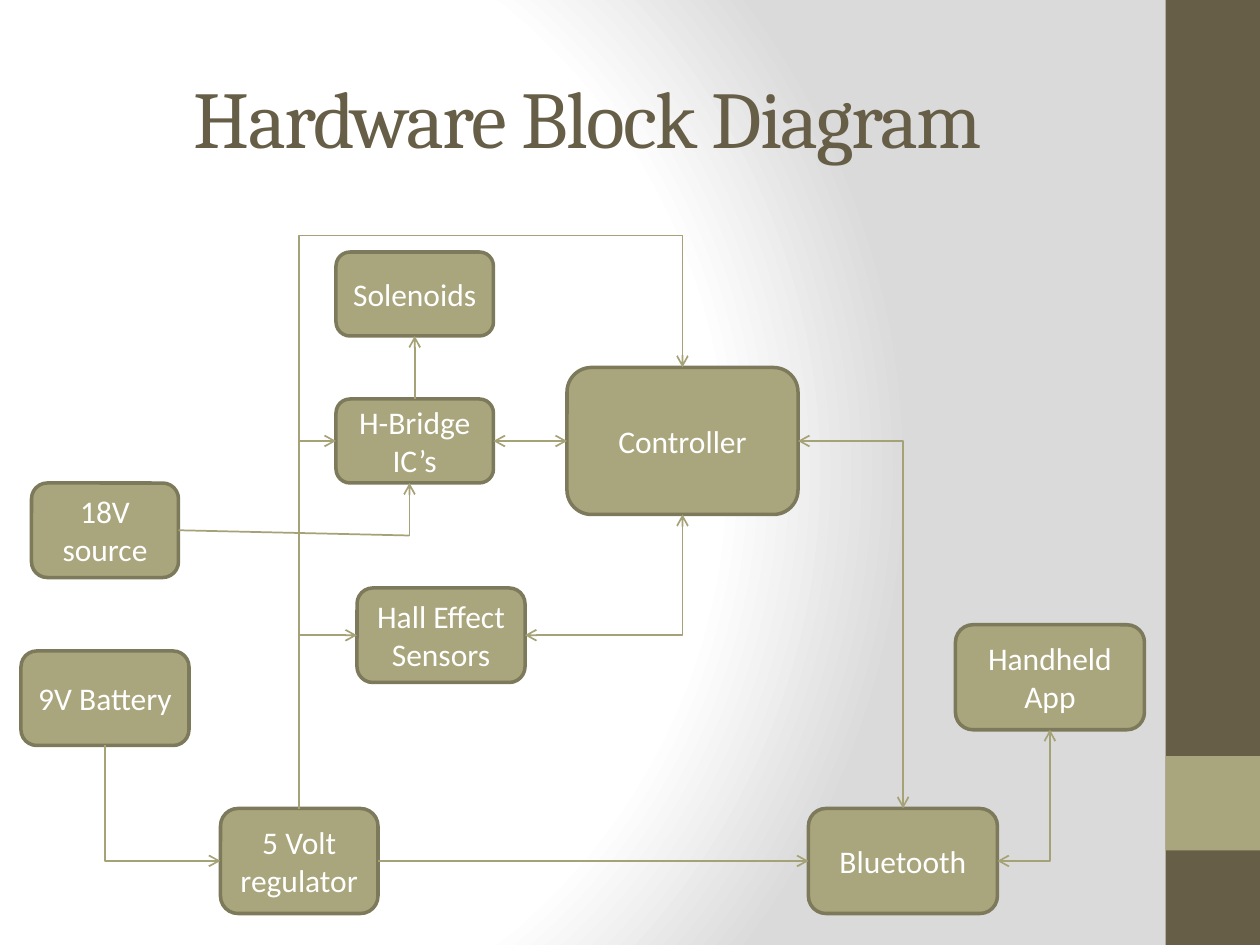
from dataclasses import dataclass

from lxml.etree import SubElement
from pptx import Presentation
from pptx.dml.color import RGBColor
from pptx.enum.shapes import MSO_CONNECTOR as Connector, MSO_SHAPE as Shape
from pptx.enum.text import MSO_ANCHOR as Anchor, MSO_AUTO_SIZE as AutoSize, PP_ALIGN as Align
from pptx.oxml import parse_xml
from pptx.oxml.ns import nsdecls, qn
from pptx.util import Pt

PX = 7620
TOP, LEFT, BOTTOM, RIGHT = range(4)


@dataclass(frozen=True)
class Theme:
    """Hold the colours, fonts and type sizes."""
    dark: str = "675E47"
    olive: str = "A9A57C"
    border: str = "7D7A5C"
    wire: str = "A6A278"
    white: str = "FFFFFF"
    shade: str = "DADADA"
    title_font: str = "Cambria"
    body_font: str = "Calibri"
    title_size: int = 46
    body_size: int = 18


THEME = Theme()

BLOCKS = {
    "9V Battery": (20, 380, 160, 90),
    "5 Volt regulator": (210, 530, 150, 100),
    "Controller": (540, 110, 220, 140),
    "Bluetooth": (770, 530, 180, 100),
    "Handheld App": (910, 355, 180, 100),
    "Hall Effect Sensors": (340, 320, 160, 90),
    "H-Bridge IC’s": (320, 140, 150, 80),
    "Solenoids": (320, 0, 150, 80),
    "18V source": (30, 220, 140, 90),
}

STRAIGHT_LINKS = [
    ("5 Volt regulator", RIGHT, "Bluetooth", LEFT, "tail"),
    ("H-Bridge IC’s", TOP, "Solenoids", BOTTOM, "tail"),
    ("Controller", LEFT, "H-Bridge IC’s", RIGHT, "head tail"),
]

CORNER_LINKS = [
    ("5 Volt regulator", LEFT, "9V Battery", BOTTOM, "head"),
    ("Controller", RIGHT, "Bluetooth", TOP, "head tail"),
    ("Bluetooth", RIGHT, "Handheld App", BOTTOM, "head tail"),
    ("Hall Effect Sensors", LEFT, "5 Volt regulator", TOP, "head"),
    ("H-Bridge IC’s", LEFT, "5 Volt regulator", TOP, "head"),
    ("Hall Effect Sensors", RIGHT, "Controller", BOTTOM, "head tail"),
]


def px(*lengths):
    """Turn px lengths into EMU."""
    return [int(length * PX) for length in lengths]


def style_runs(text_frame, font_name, size, color):
    """Centre the text and format its runs."""
    text_frame.word_wrap = True
    text_frame.vertical_anchor = Anchor.MIDDLE
    for paragraph in text_frame.paragraphs:
        paragraph.alignment = Align.CENTER
        for run in paragraph.runs:
            run.font.name = font_name
            run.font.size = Pt(size)
            run.font.color.rgb = RGBColor.from_string(color)


def add_box(slide, kind, box, fill, border=None):
    """Add a flat filled shape."""
    shape = slide.shapes.add_shape(kind, *px(*box))
    shape.shadow.inherit = False
    shape.fill.solid()
    shape.fill.fore_color.rgb = RGBColor.from_string(fill)
    if border:
        shape.line.color.rgb = RGBColor.from_string(border)
        shape.line.width = Pt(2)
    else:
        shape.line.fill.background()
    return shape


def set_background(slide):
    """Give the slide its radial gradient."""
    slide.background.fill.gradient()
    gradient = slide.element.find(".//" + qn("a:gradFill"))
    stops = "".join(
        f'<a:gs pos="{position}"><a:srgbClr val="{color}"/></a:gs>'
        for position, color in ((0, THEME.white), (75000, THEME.white), (100000, THEME.shade))
    )
    gradient.getparent().replace(gradient, parse_xml(
        f'<a:gradFill {nsdecls("a")} rotWithShape="1"><a:gsLst>{stops}</a:gsLst>'
        '<a:path path="circle"><a:fillToRect l="20000" t="50000" r="100000" b="50000"/>'
        '</a:path></a:gradFill>'
    ))


def add_side_band(slide, left, top, width, height):
    """Add the dark side band with its light square."""
    add_box(slide, Shape.RECTANGLE, (left, top, width, height), THEME.dark)
    square_top = top + height - 2 * width
    add_box(slide, Shape.RECTANGLE, (left, square_top, width, width), THEME.olive)


def add_title(slide, left, top, width, height):
    """Place and format the title placeholder."""
    title = slide.shapes.title
    title.left, title.top, title.width, title.height = px(left, top, width, height)
    title.text_frame.text = "Hardware Block Diagram"
    title.text_frame.auto_size = AutoSize.NONE
    style_runs(title.text_frame, THEME.title_font, THEME.title_size, THEME.dark)
    for run in title.text_frame.paragraphs[0].runs:
        run.font._element.set("spc", "-100")


def add_wire(slide, kind, start, end, arrows=""):
    """Add a thin connector with open arrowheads."""
    wire = slide.shapes.add_connector(kind, *px(*start, *end))
    wire.line.color.rgb = RGBColor.from_string(THEME.wire)
    wire.line.width = Pt(1)
    properties = wire._element.spPr
    for side in arrows.split():
        SubElement(properties.find(qn("a:ln")), qn(f"a:{side}End"), type="arrow")
    SubElement(properties, qn("a:effectLst"))
    return wire


def link(slide, kind, blocks, source, source_side, target, target_side, arrows):
    """Join two blocks with a connector."""
    wire = add_wire(slide, kind, (0, 0), (0, 0), arrows)
    wire.begin_connect(blocks[source], source_side)
    wire.end_connect(blocks[target], target_side)
    return wire


def set_preset(wire, preset):
    """Change the connector geometry and return its guide list."""
    geometry = wire._element.spPr.find(qn("a:prstGeom"))
    geometry.set("prst", preset)
    return geometry.get_or_add_avLst()


def add_overhead_wire(slide, blocks):
    """Route the regulator over the blocks to the controller."""
    wire = link(slide, Connector.ELBOW, blocks, "5 Volt regulator", TOP, "Controller", TOP, "tail")
    center_x, center_y = wire.left + wire.width // 2, wire.top + wire.height // 2
    wire.width, wire.height = wire.height, wire.width
    wire.left, wire.top = center_x - wire.width // 2, center_y - wire.height // 2
    transform = wire._element.spPr.find(qn("a:xfrm"))
    for name, value in (("rot", "5400000"), ("flipH", "1"), ("flipV", "1")):
        transform.set(name, value)
    guides = set_preset(wire, "bentConnector3")
    SubElement(guides, qn("a:gd"), name="adj1", fmla="val 129900")


def add_diagram(slide, left, top):
    """Add the hardware blocks and their wiring."""
    blocks = {}
    for name, (x, y, width, height) in BLOCKS.items():
        box = (left + x, top + y, width, height)
        block = add_box(slide, Shape.ROUNDED_RECTANGLE, box, THEME.olive, THEME.border)
        block.text_frame.text = name
        style_runs(block.text_frame, THEME.body_font, THEME.body_size, THEME.white)
        blocks[name] = block
    for ends in STRAIGHT_LINKS:
        link(slide, Connector.STRAIGHT, blocks, *ends)
    for ends in CORNER_LINKS:
        set_preset(link(slide, Connector.ELBOW, blocks, *ends), "bentConnector2")
    add_overhead_wire(slide, blocks)
    bend = (left + 390, top + 270)
    supply = add_wire(slide, Connector.STRAIGHT, (left + 170, top + 265), bend)
    supply.begin_connect(blocks["18V source"], RIGHT)
    add_wire(slide, Connector.STRAIGHT, bend, (left + 390, top + 220), "tail")


def main():
    """Build and save the presentation."""
    presentation = Presentation()
    presentation.slide_width, presentation.slide_height = px(1200, 900)
    slide = presentation.slides.add_slide(presentation.slide_layouts[5])
    set_background(slide)
    add_side_band(slide, 1110, 0, 90, 900)
    add_title(slide, 60, 36, 1000, 150)
    add_diagram(slide, 0, 240)
    presentation.save("out.pptx")


if __name__ == "__main__":
    main()
